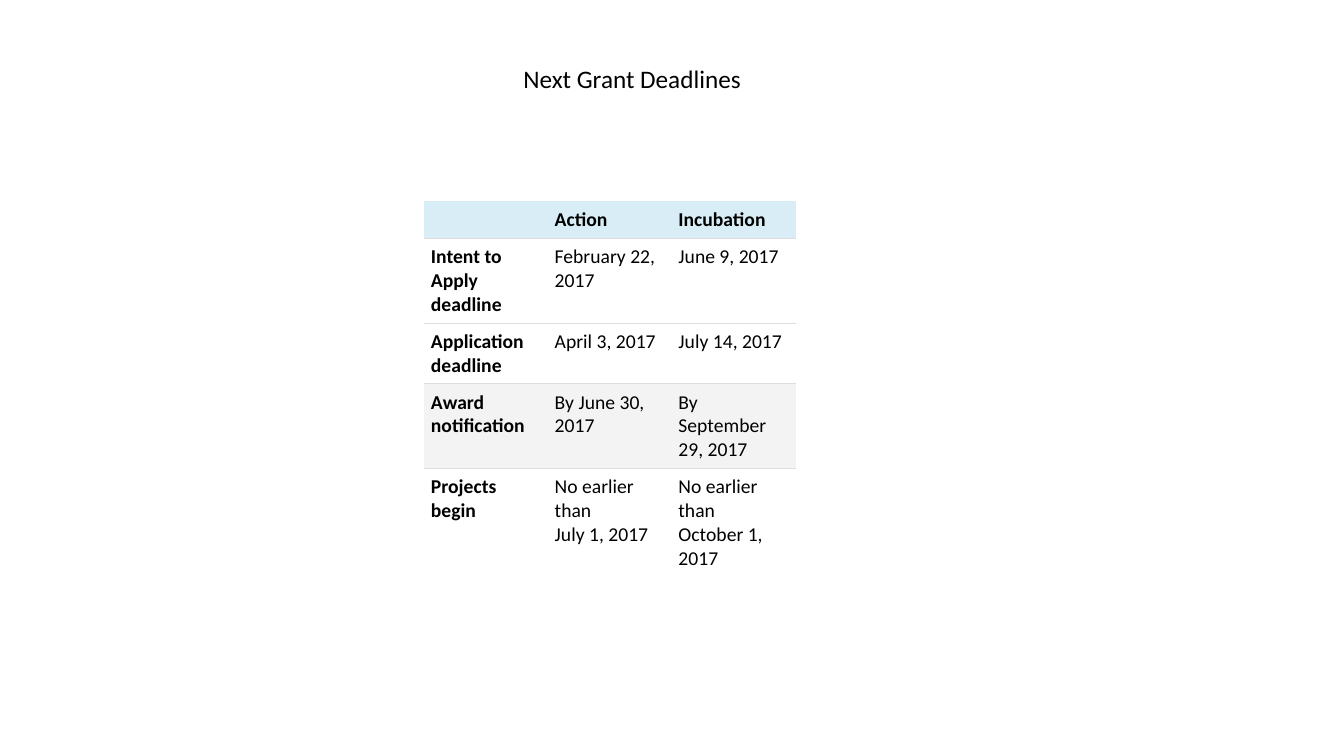
import pptx
import pptx.util
import pptx.dml.color
import pptx.enum.text
import pptx.oxml
import pptx.oxml.ns

Pt = pptx.util.Pt
RGB = pptx.dml.color.RGBColor.from_string
ALIGN = pptx.enum.text.PP_ALIGN
ANCHOR = pptx.enum.text.MSO_ANCHOR
COLORS = {"text": "000000", "header": "D9EDF7", "plain": "FFFFFF",
          "shaded": "F3F3F3", "rule": "DDDDDD"}


def write(tf, text, size=14, bold=False, align=ALIGN.LEFT):
    tf.word_wrap = True
    p = tf.paragraphs[0]
    p.alignment = align
    if not text:
        p._p.get_or_add_endParaRPr().set("sz", str(size * 100))
    for i, line in enumerate(text.split("\n") if text else []):
        if i:
            p.add_line_break()
        r = p.add_run()
        r.text = line
        r.font.name = "Calibri"
        r.font.size = Pt(size)
        r.font.bold = bold
        r.font.color.rgb = RGB(COLORS["text"])


def add_border(cell, side, color=None):
    fill = f'<a:solidFill><a:srgbClr val="{color}"/></a:solidFill>' if color else "<a:noFill/>"
    cell._tc.get_or_add_tcPr().append(pptx.oxml.parse_xml(
        f'<a:{side} {pptx.oxml.ns.nsdecls("a")} w="{Pt(0.75)}">{fill}</a:{side}>'))


prs = pptx.Presentation()
prs.slide_width, prs.slide_height = Pt(960), Pt(540)
s = prs.slides.add_slide(prs.slide_layouts[6])

# Title
sp = s.shapes.add_textbox(Pt(178), Pt(42), Pt(547), Pt(29))
write(sp.text_frame, "Next Grant Deadlines", size=18, align=ALIGN.CENTER)

# Deadlines: fill, number of text lines, cell texts
rows = [
    ("header", 1, ["", "Action", "Incubation"]),
    ("plain", 3, ["Intent to Apply deadline", "February 22, 2017", "June 9, 2017"]),
    ("plain", 2, ["Application deadline", "April 3, 2017", "July 14, 2017"]),
    ("shaded", 3, ["Award notification", "By June 30, 2017", "By September 29, 2017"]),
    ("plain", 4, ["Projects begin", "No earlier than\nJuly 1, 2017",
                  "No earlier than\nOctober 1, 2017"]),
]
INSET, LINE, COL_WIDTH = 4.67, 17.09, 88.4
heights = [2 * INSET + LINE * lines for _, lines, _ in rows]

# Table
table = s.shapes.add_table(len(rows), 3, Pt(303.2), Pt(143.7),
                           Pt(3 * COL_WIDTH), Pt(sum(heights))).table
table.horz_banding = False
for column in table.columns:
    column.width = Pt(COL_WIDTH)

for i, (fill, _, texts) in enumerate(rows):
    table.rows[i].height = Pt(heights[i])
    for j, text in enumerate(texts):
        cell = table.cell(i, j)
        cell.margin_left = cell.margin_right = Pt(INSET)
        cell.margin_top = cell.margin_bottom = Pt(INSET)
        cell.vertical_anchor = ANCHOR.TOP if i else ANCHOR.MIDDLE
        write(cell.text_frame, text, bold=i == 0 or j == 0)
        # Rules run only between rows
        add_border(cell, "lnL")
        add_border(cell, "lnR")
        add_border(cell, "lnT", COLORS["rule"] if i else None)
        add_border(cell, "lnB", COLORS["rule"] if i < len(rows) - 1 else None)
        cell.fill.solid()
        cell.fill.fore_color.rgb = RGB(COLORS[fill])

prs.save("out.pptx")
